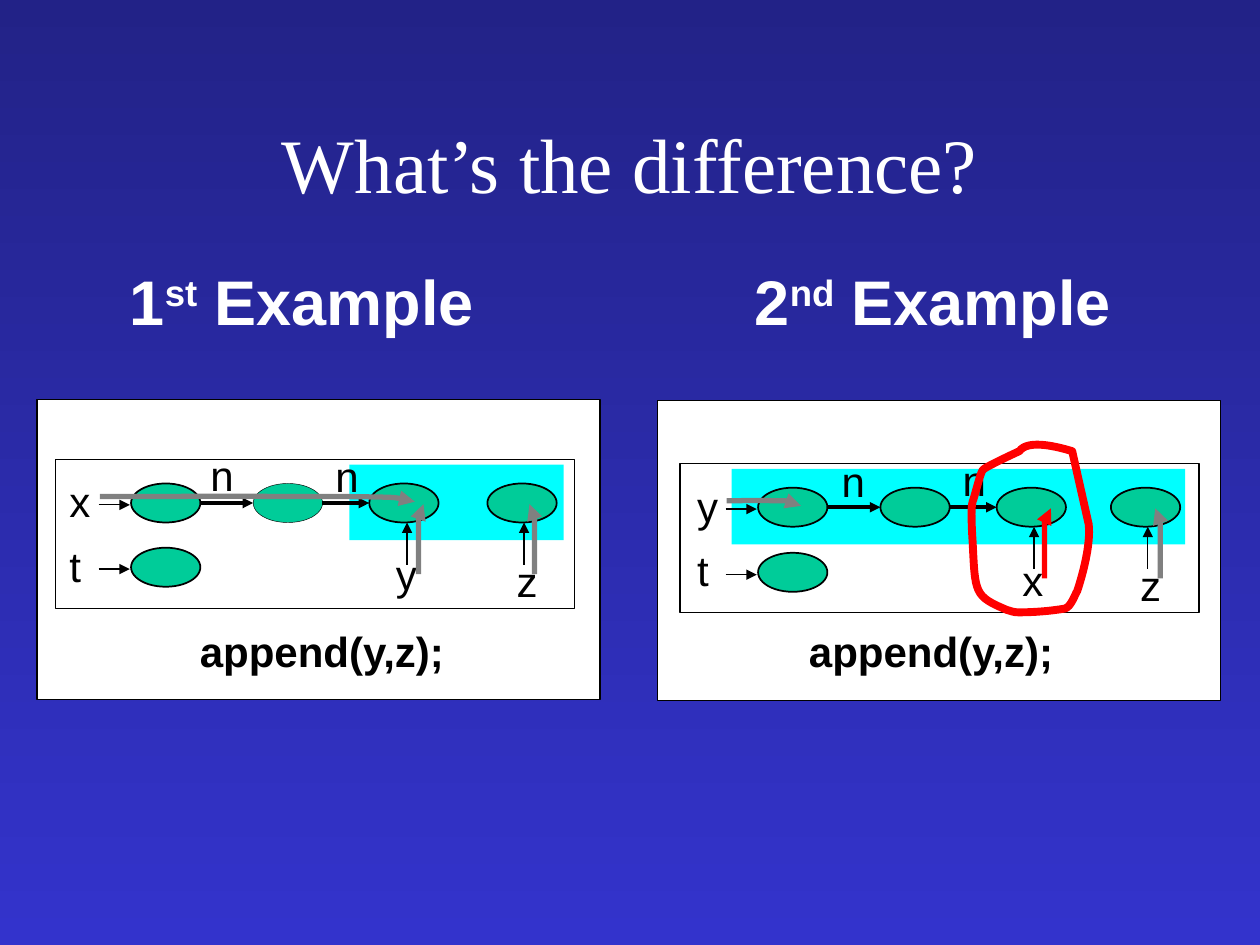
from lxml import etree
from pptx import Presentation, util as u
from pptx.dml.color import RGBColor
from pptx.enum import shapes, text
from pptx.oxml.ns import qn

COLORS = dict(top="222287", bottom="3333CC", white="FFFFFF", black="000000",
              cell="00CC99", highlight="00FFFF", trace="808080", mark="FF0000")
PANEL_SIZE, FRAME_SIZE = (321.8, 171.4), (296.6, 85)
CELL_SIZE, LABEL_HEIGHT = (39.6, 22.3), 36
CELL_TOP, HIGHLIGHT_TOP, HIGHLIGHT_HEIGHT = 13.7, 2.9, 43.2
TITLE = "What’s the difference?"
HEADINGS = [(38.2, "1", "st", " Example"), (395.3, "2", "nd", " Example")]
EXAMPLES = [
    dict(panel=(375.8, 229), frame=(388.6, 265), call="append(y,z);",
         call_inset=dict(margin_left=0, margin_right=9.2, margin_bottom=14.2),
         highlight=(29.5, 259.2),
         cells=[44.6, 114.5, 180.9, 246.2], outlines=[1, 1, 1, 1],
         links=[(81.4, -8.3), (150.5, -8.6)], pointers=[("y", 5.8, 25.9), ("t", 42.9, 63.4)],
         pointer_left=2.7, second_top=50.9,
         uprights=[("x", 188.6, 48.2, 202.3), ("z", 255.8, 51.1, 267.3)],
         along=(26.6, 69.1), rises=[(208.3, 3.6, "mark"), (274.5, -2.9, "trace")]),
    dict(panel=(21.1, 228.2), frame=(31.9, 262.6), call="append(y,z);",
         call_inset=dict(margin_left=4, margin_right=0, margin_bottom=13.1),
         highlight=(167.8, 122.4),
         cells=[43, 112.8, 179.1, 246.6], outlines=[1, 0.25, 1, 1],
         links=[(77.3, -9.4), (148.8, -8.8)], pointers=[("x", 5.6, 25.9), ("t", 42.5, 62.6)],
         pointer_left=0.6, second_top=50.4,
         uprights=[("y", 187.2, 47.5, 200.7), ("z", 256.3, 51.1, 267.6)],
         along=(25.2, 205.2), rises=[(207.2, 2.9, "trace"), (273.6, -2.9, "trace")]),
]
RING_START = (612.7, 257.8)
RING_CURVES = [
    ((605.5, 255.6), (587.5, 250.6), (582.5, 257.8)),
    ((581, 258.5), (562.3, 267.1), (561.6, 268.6)),
    ((560.2, 270), (556.6, 285.1), (555.8, 286.6)),
    ((554.4, 290.2), (555.8, 309.6), (555.8, 309.6)),
    ((557.3, 339.1), (556.6, 340.6), (575.3, 348.5)),
    ((577.4, 349.2), (579.6, 349.9), (581.8, 349.9)),
    ((591.1, 349.9), (599.8, 349.2), (608.4, 347.8)),
    ((612, 347), (614.2, 339.8), (615.6, 337.7)),
    ((618.5, 329), (623.5, 311), (622.1, 299.5)),
]


def color(key):
    return RGBColor.from_string(COLORS[key])


def apply(target, values):
    for key, value in values.items():
        setattr(target, key, value)


def stroke(part, key, width, arrow=False):
    part.line.color.rgb = color(key)
    part.line.width = u.Pt(width)
    if arrow:
        etree.SubElement(part.line._get_or_add_ln(), qn("a:tailEnd"), type="triangle")


def block(kind, at, size, fill, outline=None):
    part = slide.shapes.add_shape(kind, *map(u.Pt, (*at, *size)))
    part.shadow.inherit = False
    part.fill.solid()
    part.fill.fore_color.rgb = color(fill)
    if outline:
        stroke(part, "black", outline)
    else:
        part.line.fill.background()
    return part


def write(part, runs, size, key="black", face="Arial", bold=False,
          align=text.PP_ALIGN.LEFT, **frame):
    apply(part.text_frame, dict(word_wrap=True, **frame))
    paragraph = part.text_frame.paragraphs[0]
    paragraph.alignment = align
    for words, raised in runs:
        run = paragraph.add_run()
        run.text = words
        apply(run.font, dict(size=u.Pt(size), name=face, bold=bold))
        run.font.color.rgb = color(key)
        if raised:
            run.font._element.set("baseline", "30000")


def box(at, size, *args, **kwargs):
    write(slide.shapes.add_textbox(*map(u.Pt, (*at, *size))), *args, **kwargs)


def arrow(start, end, width):
    line = slide.shapes.add_connector(shapes.MSO_CONNECTOR.STRAIGHT, *map(u.Pt, (*start, *end)))
    stroke(line, "black", width, arrow=True)
    etree.SubElement(line._element.spPr, qn("a:effectLst"))


def curve(start, bends, key, width, closed=False):
    builder = slide.shapes.build_freeform(*map(u.Pt, start))
    builder.add_line_segments([tuple(map(u.Pt, bend[-1])) for bend in bends], close=closed)
    part = builder.convert_to_shape()
    segments = list(part._element.iter(qn("a:lnTo")))
    for segment, bend in zip(segments, bends):
        segment.tag = qn("a:cubicBezTo")
        for point in list(segment):
            segment.remove(point)
        for x, y in bend:
            etree.SubElement(segment, qn("a:pt"), x=str(u.Pt(x) - part.left),
                             y=str(u.Pt(y) - part.top))
    part.shadow.inherit = False
    part.fill.background()
    stroke(part, key, width, arrow=not closed)


def draw_example(ex):
    def at(x, y):
        return ex["frame"][0] + x, ex["frame"][1] + y

    rect, oval = shapes.MSO_SHAPE.RECTANGLE, shapes.MSO_SHAPE.OVAL
    center = text.PP_ALIGN.CENTER
    cells, cell_width = ex["cells"], CELL_SIZE[0]
    panel = block(rect, ex["panel"], PANEL_SIZE, "white", 0.75)
    insets = {side: u.Pt(value) for side, value in ex["call_inset"].items()}
    write(panel, [(ex["call"], False)], 24, bold=True, align=center,
          vertical_anchor=text.MSO_ANCHOR.BOTTOM, **insets)
    block(rect, ex["frame"], FRAME_SIZE, "white", 0.75)
    left, width = ex["highlight"]
    block(rect, at(left, HIGHLIGHT_TOP), (width, HIGHLIGHT_HEIGHT), "highlight")
    for x, outline in zip(cells, ex["outlines"]):
        block(oval, at(x, CELL_TOP), CELL_SIZE, "cell", outline)
    block(oval, at(cells[0], ex["second_top"]), CELL_SIZE, "cell", 1)

    middle = CELL_TOP + CELL_SIZE[1] / 2
    for (x, y), here, after in zip(ex["links"], cells, cells[1:]):
        arrow(at(here + cell_width, middle), at(after, middle), 2)
        box(at(x, y), (35.3, LABEL_HEIGHT), [("n", False)], 24, align=center)
    for name, y, arrow_y in ex["pointers"]:
        box(at(ex["pointer_left"], y), (29.5, LABEL_HEIGHT), [(name, False)], 24)
        arrow(at(cells[0] - 18.6, arrow_y), at(cells[0] - 0.7, arrow_y), 0.75)
    for name, x, y, arrow_x in ex["uprights"]:
        box(at(x, y), (33.8, LABEL_HEIGHT), [(name, False)], 24)
        arrow(at(arrow_x, 60), at(arrow_x, 36), 0.75)

    start, end = ex["along"]
    knee = start + 0.79 * (end - start)
    third = (knee - start) / 3
    curve(at(start, 21.2), [(at(start + third, 21), at(knee - third, 21), at(knee, 21.2)),
                            (at(end - 4, 21.6), at(end - 2, 23), at(end, 24.1))], "trace", 3)
    for x, lean, key in ex["rises"]:
        curve(at(x, 65.5), [(at(x, 53.3), at(x, 41), at(x, 34.5)),
                            (at(x, 28), at(x + lean / 2, 26.6), at(x + lean, 25.5))], key, 3)


prs = Presentation()
prs.slide_width, prs.slide_height = u.Pt(720), u.Pt(540)
slide = prs.slides.add_slide(prs.slide_layouts[6])
backdrop = slide.background.fill
backdrop.gradient()
backdrop.gradient_angle = 270
for stop, key in zip(backdrop.gradient_stops, ("top", "bottom")):
    stop.color.rgb = color(key)

box((54, 48.2), (612, 90), [(TITLE, False)], 44, "white", "Times New Roman",
    align=text.PP_ALIGN.CENTER, vertical_anchor=text.MSO_ANCHOR.MIDDLE)
for left, number, ordinal, rest in HEADINGS:
    box((left, 149.8), (260.6, 43.2), [(number, False), (ordinal, True), (rest, False)],
        36, "white", bold=True, margin_left=u.Pt(36), margin_right=0, margin_top=0, margin_bottom=0)
for example in EXAMPLES:
    draw_example(example)
curve(RING_START, RING_CURVES, "mark", 4.5, closed=True)
prs.save("out.pptx")
